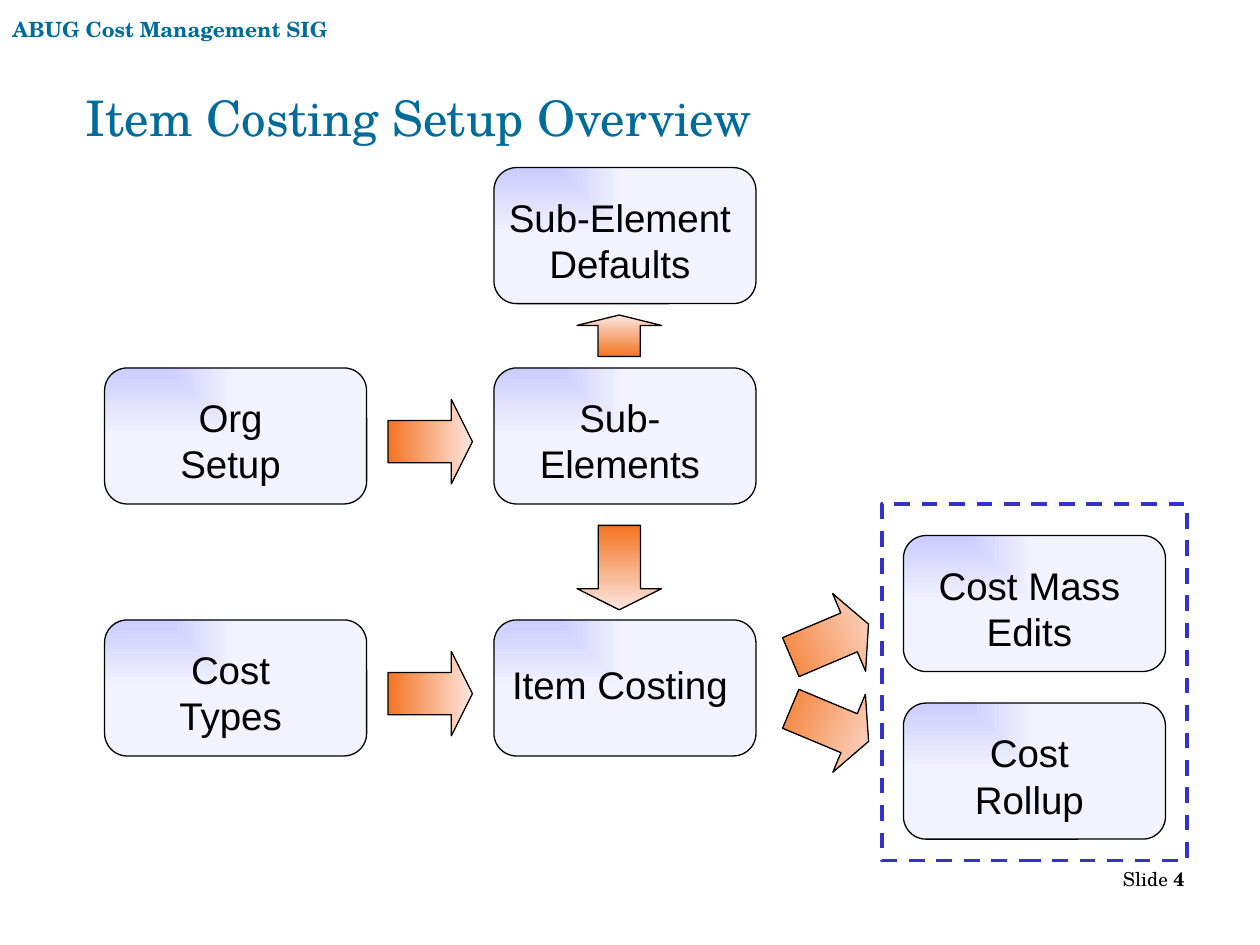
from lxml import etree
from pptx import Presentation
from pptx.dml.color import RGBColor as RGB
from pptx.enum.dml import MSO_LINE as Dash
from pptx.enum.shapes import MSO_SHAPE as Kind
from pptx.enum.text import MSO_ANCHOR as Anchor, MSO_AUTO_SIZE as Auto, PP_ALIGN as Align
from pptx.oxml.ns import qn
from pptx.util import Inches, Pt

COLORS = {
    "teal": "006C9C", "ink": "000000", "frame": "3333CC",
    "lilac": "CCCCFF", "pale": "F3F3FF",
    "orange": "F47421", "peach": "FCE6E1",
}
SERIF, SANS = "TeX Gyre Schola", "Arial"
BOX_W, BOX_H = 2.08, 1.08
LEFT, MID, RIGHT = 0.83, 3.92, 7.17

# Left, top and label lines of each box
BOXES = [
    (MID, 1.33, ["Sub-Element Defaults"]),
    (LEFT, 2.92, ["Org", "Setup"]),
    (MID, 2.92, ["Sub-Elements"]),
    (LEFT, 4.92, ["Cost", "Types"]),
    (MID, 4.92, ["Item Costing"]),
    (RIGHT, 4.25, ["Cost Mass Edits"]),
    (RIGHT, 5.58, ["Cost", "Rollup"]),
]
# Left, top, width and turn of each arrow
ARROWS = [
    (3.08, 3.17, 0.67, 0),
    (3.08, 5.17, 0.67, 0),
    (4.75, 2.33, 0.33, 270),
    (4.58, 4.17, 0.67, 90),
    (6.25, 4.75, 0.67, 337),
    (6.25, 5.42, 0.67, 22.7),
]


def color(name):
    return RGB.from_string(COLORS[name])


class Deck:
    def __init__(self):
        self.prs = Presentation()
        self.prs.slide_width, self.prs.slide_height = Inches(10), Inches(7.5)
        self.slide = self.prs.slides.add_slide(self.prs.slide_layouts[5])

    def run(self, para, text, size, font=SERIF, hue="ink", bold=False):
        run = para.add_run()
        run.text = text
        run.font.size, run.font.name, run.font.bold = Pt(size), font, bold
        run.font.color.rgb = color(hue)

    def title(self, text, *area):
        shape = self.slide.shapes.title
        shape.left, shape.top, shape.width, shape.height = map(Inches, area)
        frame = shape.text_frame
        frame.vertical_anchor, frame.auto_size = Anchor.MIDDLE, Auto.NONE
        para = frame.paragraphs[0]
        para.alignment = Align.LEFT
        self.run(para, text, 28, hue="teal")

    def text(self, area, align=Align.LEFT, grow=True):
        """Add a text box and return its empty first paragraph."""
        frame = self.slide.shapes.add_textbox(*map(Inches, area)).text_frame
        frame.word_wrap = True
        frame.auto_size = Auto.SHAPE_TO_FIT_TEXT if grow else Auto.NONE
        para = frame.paragraphs[0]
        para.alignment = align
        return para

    def shape(self, kind, area, hue="ink", width=0.75):
        shape = self.slide.shapes.add_shape(kind, *map(Inches, area))
        shape.shadow.inherit = False
        shape.line.color.rgb, shape.line.width = color(hue), Pt(width)
        return shape

    def blend(self, shape, *hues):
        shape.fill.gradient()
        shape.fill.gradient_angle = 0
        for stop, hue, place in zip(shape.fill.gradient_stops, hues, (0, 1)):
            stop.color.rgb, stop.position = color(hue), place

    def corner(self, shape):
        """Make the gradient spread from the top left corner."""
        grad = shape._element.spPr.find(qn("a:gradFill"))
        rect = etree.Element(qn("a:path"), {"path": "rect"})
        etree.SubElement(rect, qn("a:fillToRect"), r="100000", b="100000")
        grad.replace(grad.find(qn("a:lin")), rect)

    def box(self, left, top, lines):
        shape = self.shape(Kind.FLOWCHART_ALTERNATE_PROCESS, (left, top, BOX_W, BOX_H))
        self.blend(shape, "lilac", "pale")
        self.corner(shape)
        single = lines == ["Item Costing"]
        drop, high = (0.28, 0.47) if single else (0.16, 0.83)
        para = self.text((left, top + drop, 2, high), Align.CENTER)
        for i, line in enumerate(lines):
            if i:
                para.add_line_break()
            self.run(para, line, 22, SANS)

    def arrow(self, left, top, width, turn):
        shape = self.shape(Kind.RIGHT_ARROW, (left, top, width, 0.67))
        shape.adjustments[0], shape.adjustments[1] = 0.5, 0.25
        shape.rotation = turn
        self.blend(shape, "orange", "peach")

    def frame(self, *area):
        shape = self.shape(Kind.RECTANGLE, area, "frame", 2.25)
        shape.fill.background()
        shape.line.dash_style = Dash.DASH


def main():
    deck = Deck()
    head = deck.text((0, 0.08, 3.67, 0.3))
    deck.run(head, "ABUG Cost Management SIG", 12, hue="teal", bold=True)
    deck.title("Item Costing Setup Overview", 0.58, 0.58, 9.25, 0.7)
    for box in BOXES:
        deck.box(*box)
    for arrow in ARROWS:
        deck.arrow(*arrow)
    deck.frame(7, 4, 2.42, 2.83)
    foot = deck.text((7.17, 6.83, 2.33, 0.52), Align.RIGHT, grow=False)
    deck.run(foot, "Slide ", 11)
    deck.run(foot, "4", 11, bold=True)
    deck.prs.save("out.pptx")


if __name__ == "__main__":
    main()
